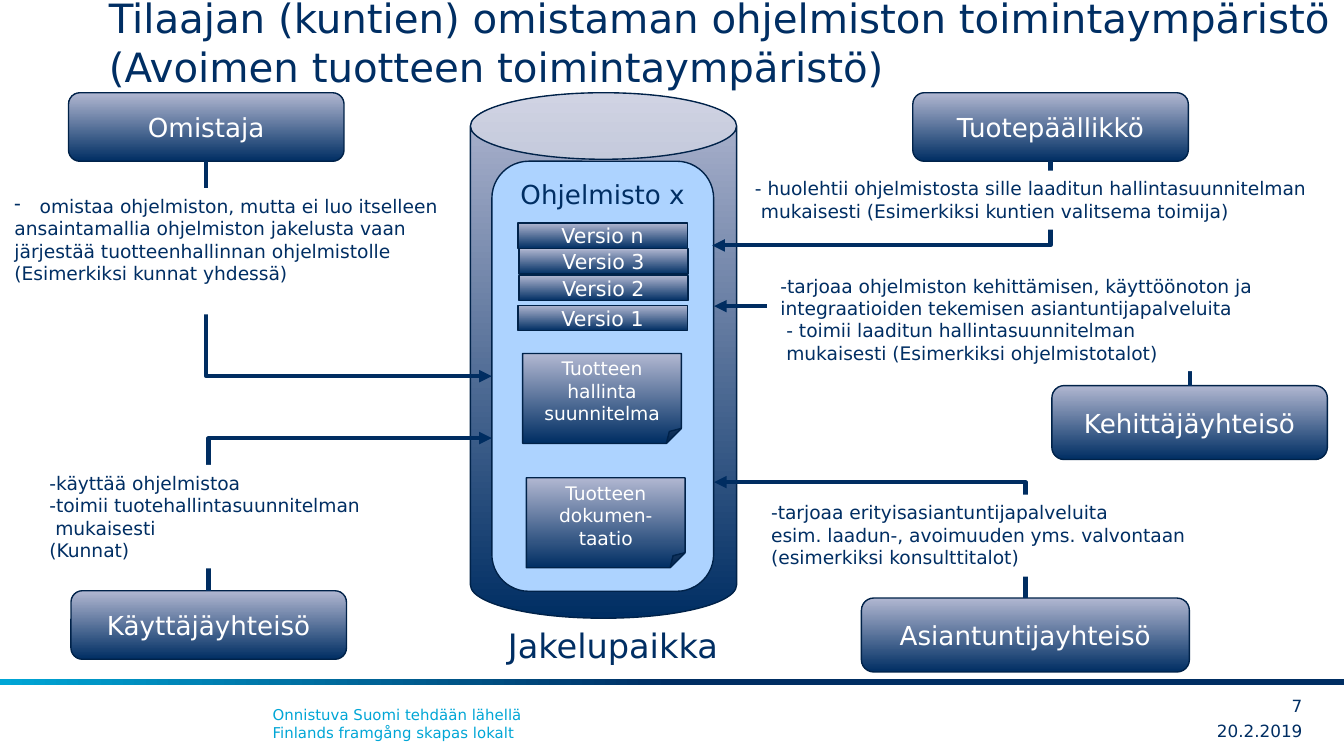
from lxml import etree
from pptx import Presentation
from pptx.dml.color import RGBColor
from pptx.enum.shapes import MSO_CONNECTOR, MSO_SHAPE
from pptx.enum.text import MSO_ANCHOR, PP_ALIGN
from pptx.oxml.ns import qn
from pptx.util import Pt

RECTANGLE = MSO_SHAPE.RECTANGLE
ROUNDED = MSO_SHAPE.ROUNDED_RECTANGLE
FOLDED = MSO_SHAPE.FOLDED_CORNER
CAN = MSO_SHAPE.CAN
ELBOW = MSO_CONNECTOR.ELBOW
LEFT, CENTER, RIGHT = PP_ALIGN.LEFT, PP_ALIGN.CENTER, PP_ALIGN.RIGHT
TOP, MIDDLE, BOTTOM = MSO_ANCHOR.TOP, MSO_ANCHOR.MIDDLE, MSO_ANCHOR.BOTTOM

FONT = "DejaVu Sans"
NAVY, CYAN, WHITE = "002E63", "00A6D6", "FFFFFF"
OUTLINE, ARROW = "002249", "002D61"
HAZE, SKY = "B1B7D1", "ADD3FF"
HANGING, SPACE = 13.5, 3.2

TITLE = ("Tilaajan (kuntien) omistaman ohjelmiston toimintaympäristö "
         "(Avoimen tuotteen toimintaympäristö)")
SLOGAN = "Onnistuva Suomi tehdään lähellä\vFinlands framgång skapas lokalt"

ROLES = [
    ("Omistaja", (36.7, 49.7, 147.6, 36.7), (263.5, 201.6)),
    ("Tuotepäällikkö", (489, 49.7, 147.6, 36.7), (381.6, 131.5)),
    ("Kehittäjäyhteisö", (563.5, 206.6, 147.6, 39.6), (382.6, 164)),
    ("Käyttäjäyhteisö", (38, 316.5, 147.6, 36.7), (263.5, 234.7)),
    ("Asiantuntijayhteisö", (461.5, 320.4, 175.7, 39.6), (382.6, 258.3)),
]

VERSIONS = [
    ("Versio 1", 277.5, 163.5),
    ("Versio 2", 278, 147.5),
    ("Versio 3", 278, 133.2),
    ("Versio n", 277.5, 119.4),
]

DOCUMENTS = [
    (["Tuotteen", "hallinta suunnitelma"], 280, 189.4),
    (["Tuotteen", "dokumen-", "taatio"], 282, 256),
]

DESCRIPTIONS = [
    ((0.7, 100.8, 249.1, 67.7), [
        ("omistaa ohjelmiston, mutta ei luo itselleen", HANGING),
        ("ansaintamallia ohjelmiston jakelusta vaan", 0),
        ("järjestää tuotteenhallinnan ohjelmistolle", 0),
        ("(Esimerkiksi kunnat yhdessä)", 0)]),
    ((19.4, 249.1, 184.3, 55.4), [
        ("-käyttää ohjelmistoa", 0),
        ("-toimii tuotehallintasuunnitelman", 0),
        ("mukaisesti", SPACE),
        ("(Kunnat)", 0)]),
    ((397.4, 91.4, 316, 31.7), [
        ("- huolehtii ohjelmistosta sille laaditun hallintasuunnitelman", 0),
        ("mukaisesti (Esimerkiksi kuntien valitsema toimija)", SPACE)]),
    ((411, 143.5, 293.8, 55.4), [
        ("-tarjoaa ohjelmiston kehittämisen, käyttöönoton ja "
         "integraatioiden tekemisen asiantuntijapalveluita", 0),
        ("- toimii laaditun hallintasuunnitelman", SPACE),
        ("mukaisesti (Esimerkiksi ohjelmistotalot)", SPACE)]),
    ((406, 265, 245.5, 43.9), [
        ("-tarjoaa erityisasiantuntijapalveluita", 0),
        ("esim. laadun-, avoimuuden yms. valvontaan", 0),
        ("(esimerkiksi konsulttitalot)", 0)]),
]

presentation = Presentation()
presentation.slide_width, presentation.slide_height = Pt(720), Pt(405)
slide = presentation.slides.add_slide(presentation.slide_layouts[6])


def color(value):
    return RGBColor.from_string(value)


def write(shape, lines, size, ink, align=LEFT, anchor=TOP):
    frame = shape.text_frame
    frame.word_wrap = True
    frame.vertical_anchor = anchor
    for index, line in enumerate(lines):
        paragraph = frame.paragraphs[0] if index == 0 else frame.add_paragraph()
        paragraph.text = line
        paragraph.alignment = align
        paragraph.font.size = Pt(size)
        paragraph.font.name = FONT
        paragraph.font.color.rgb = color(ink)


def add_text(box, text, size, ink, align=LEFT, anchor=TOP, insets=None):
    shape = slide.shapes.add_textbox(*map(Pt, box))
    write(shape, [text], size, ink, align, anchor)
    if insets:
        frame = shape.text_frame
        (frame.margin_left, frame.margin_top,
         frame.margin_right, frame.margin_bottom) = map(Pt, insets)


def add_plain(kind, box, fill=None, outline=None):
    shape = slide.shapes.add_shape(kind, *map(Pt, box))
    shape.shadow.inherit = False
    if fill:
        shape.fill.solid()
        shape.fill.fore_color.rgb = color(fill)
    if outline:
        shape.line.color.rgb = color(outline)
        shape.line.width = Pt(0.75)
    else:
        shape.line.fill.background()
    return shape


def add_gradient(kind, box, stops, angle, outline=None):
    shape = add_plain(kind, box, outline=outline)
    shape.fill.gradient()
    shape.fill.gradient_angle = angle
    for stop, (position, value) in zip(shape.fill.gradient_stops, stops):
        stop.position = position
        stop.color.rgb = color(value)
    return shape


def add_block(kind, box, lines=(), size=14):
    shape = add_gradient(kind, box, [(0, NAVY), (1, HAZE)], 90, OUTLINE)
    write(shape, lines, size, WHITE, CENTER, MIDDLE)


def add_arrow(target, source):
    connector = slide.shapes.add_connector(ELBOW, *map(Pt, target + source))
    connector.line.color.rgb = color(ARROW)
    connector.line.width = Pt(2.25)
    properties = connector._element.spPr
    properties.find(qn("a:prstGeom")).set("prst", "bentConnector2")
    line = properties.find(qn("a:ln"))
    etree.SubElement(line, qn("a:headEnd"), type="triangle")
    etree.SubElement(properties, qn("a:effectLst"))


def add_description(box, lines):
    shape = add_plain(RECTANGLE, box, WHITE)
    write(shape, [text for text, _ in lines], 10, NAVY)
    for paragraph, (_, indent) in zip(shape.text_frame.paragraphs, lines):
        if indent:
            properties = paragraph._p.get_or_add_pPr()
            properties.set("marL", str(Pt(indent)))
            if indent == HANGING:
                properties.set("indent", str(-Pt(indent)))
                bullet = etree.Element(qn("a:buChar"), char="-")
                properties.insert(0, bullet)


add_gradient(RECTANGLE, (0, 363.6, 720, 3.6), [(0.5, NAVY), (1, CYAN)], 180)
add_text((139, 374.4, 470.9, 26.6), SLOGAN, 8, CYAN)
add_text((626.4, 383.8, 71.3, 15.8), "20.2.2019", 9, NAVY, RIGHT, MIDDLE, (0, 0, 0, 0))
add_text((666.7, 370, 31, 15.8), "7", 9, NAVY, RIGHT, MIDDLE, (0, 0, 0, 0))

add_block(CAN, (252, 49.7, 142.6, 281.5))
software = add_plain(ROUNDED, (263.5, 86.4, 118.8, 230.4), SKY, OUTLINE)
write(software, ["Ohjelmisto x"], 14, NAVY, CENTER)
add_text((265, 331.2, 131, 28.8), "Jakelupaikka", 18, NAVY)

for name, left, top in VERSIONS:
    add_block(RECTANGLE, (left, top, 90.7, 13.7), [name], 11)

for name, box, target in ROLES:
    left, top, width, height = box
    edge = top if target[1] < top else top + height
    add_block(ROUNDED, box, [name])
    add_arrow(target, (left + width / 2, edge))

for box, lines in DESCRIPTIONS:
    add_description(box, lines)

for lines, left, top in DOCUMENTS:
    add_block(FOLDED, (left, top, 85, 48.2), lines, 10)

add_text((58.3, 11.5, 672.5, 40.3), TITLE, 21.6, NAVY, LEFT, BOTTOM, (0, 3.6, 0, 3.6))

presentation.save("out.pptx")
